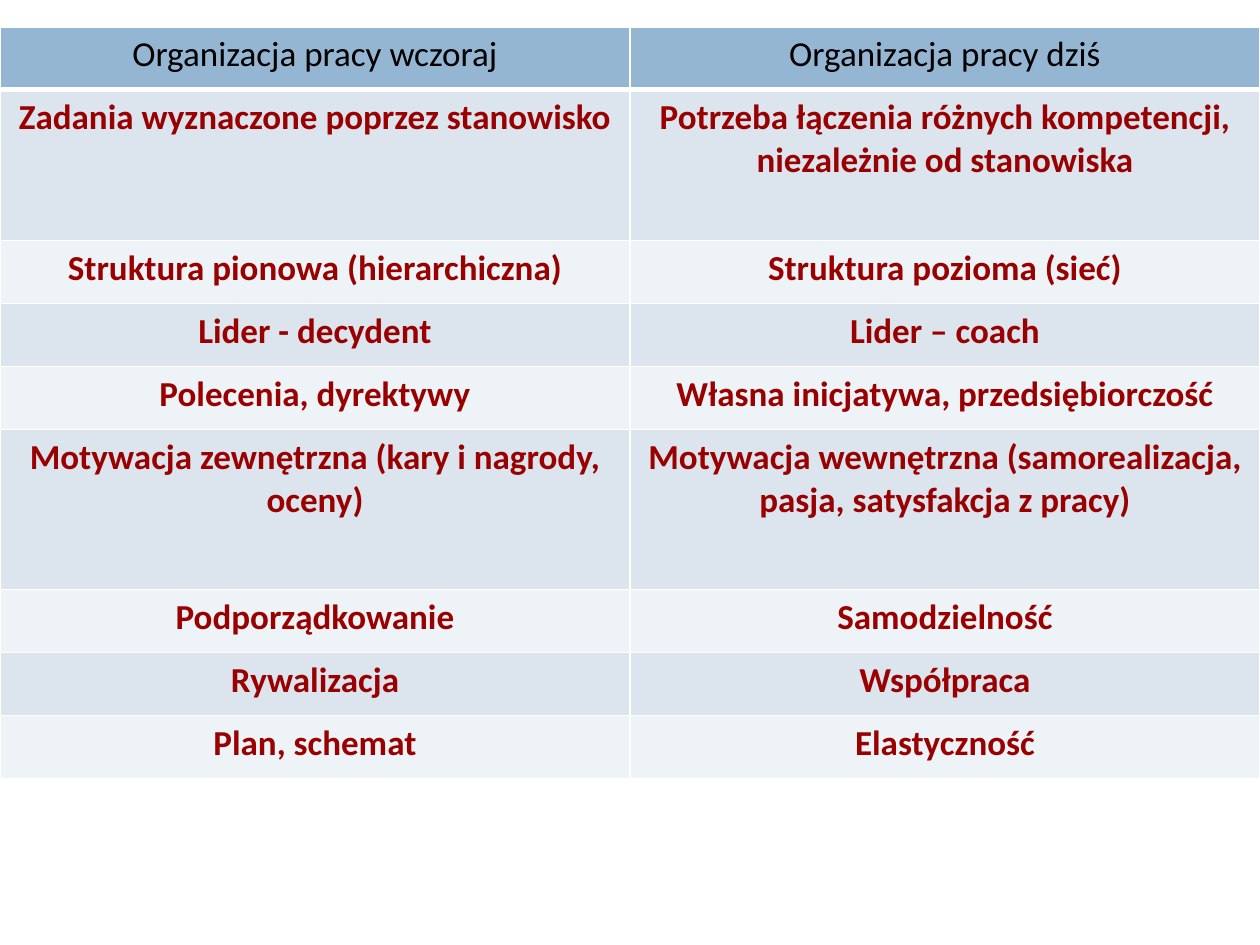
from lxml.etree import SubElement as Sub
from pptx import Presentation
from pptx.dml.color import RGBColor as RGB
from pptx.enum.text import PP_ALIGN as Align
from pptx.oxml.ns import qn
from pptx.util import Cm, Pt

ROWS = [
    ("Organizacja pracy wczoraj", "Organizacja pracy dziś"),
    ("Zadania wyznaczone poprzez stanowisko",
     "Potrzeba łączenia różnych kompetencji, niezależnie od stanowiska"),
    ("Struktura pionowa (hierarchiczna)", "Struktura pozioma (sieć)"),
    ("Lider - decydent", "Lider – coach"),
    ("Polecenia, dyrektywy", "Własna inicjatywa, przedsiębiorczość"),
    ("Motywacja zewnętrzna (kary i nagrody, oceny)",
     "Motywacja wewnętrzna (samorealizacja, pasja, satysfakcja z pracy)"),
    ("Podporządkowanie", "Samodzielność"),
    ("Rywalizacja", "Współpraca"),
    ("Plan, schemat", "Elastyczność"),
]
TALL = {1: 3.04, 5: 3.22}
LOW = 1.27
WIDTH, HEIGHT, TOP = 25.4, 19.05, 0.54

BLACK = RGB(0x00, 0x00, 0x00)
WHITE = RGB(0xFF, 0xFF, 0xFF)
RED = RGB(0x99, 0x00, 0x00)
BLUE = RGB(0x94, 0xB6, 0xD2)
BANDS = RGB(0xEE, 0xF3, 0xF7), RGB(0xDC, 0xE5, 0xEE)


def write(cell, text, color=RED, bold=True, size=20):
    par = cell.text_frame.paragraphs[0]
    par.alignment = Align.CENTER
    run = par.add_run()
    run.text = text
    font = run.font
    font.name, font.size, font.bold = "Calibri", Pt(size), bold
    font.color.rgb = color


def frame(cell, base=1):
    props = cell._tc.get_or_add_tcPr()
    for i, (side, width) in enumerate(
            [("lnL", 1), ("lnR", 1), ("lnT", 1), ("lnB", base)]):
        line = Sub(props, qn("a:" + side), w=str(Pt(width)))
        fill = Sub(line, qn("a:solidFill"))
        Sub(fill, qn("a:srgbClr"), val=str(WHITE))
        props.insert(i, line)


deck = Presentation()
deck.slide_width, deck.slide_height = Cm(WIDTH), Cm(HEIGHT)
slide = deck.slides.add_slide(deck.slide_layouts[6])

highs = [TALL.get(i, LOW) for i in range(len(ROWS))]
table = slide.shapes.add_table(
    len(ROWS), 2, Cm(0), Cm(TOP), Cm(WIDTH), Cm(sum(highs))).table

for r, (pair, high) in enumerate(zip(ROWS, highs)):
    table.rows[r].height = Cm(high)
    head = r == 0
    for c, text in enumerate(pair):
        cell = table.cell(r, c)
        cell.fill.solid()
        cell.fill.fore_color.rgb = BLUE if head else BANDS[r % 2]
        frame(cell, base=3 if head else 1)
        write(cell, text, color=BLACK if head else RED, bold=not head)

deck.save("out.pptx")
